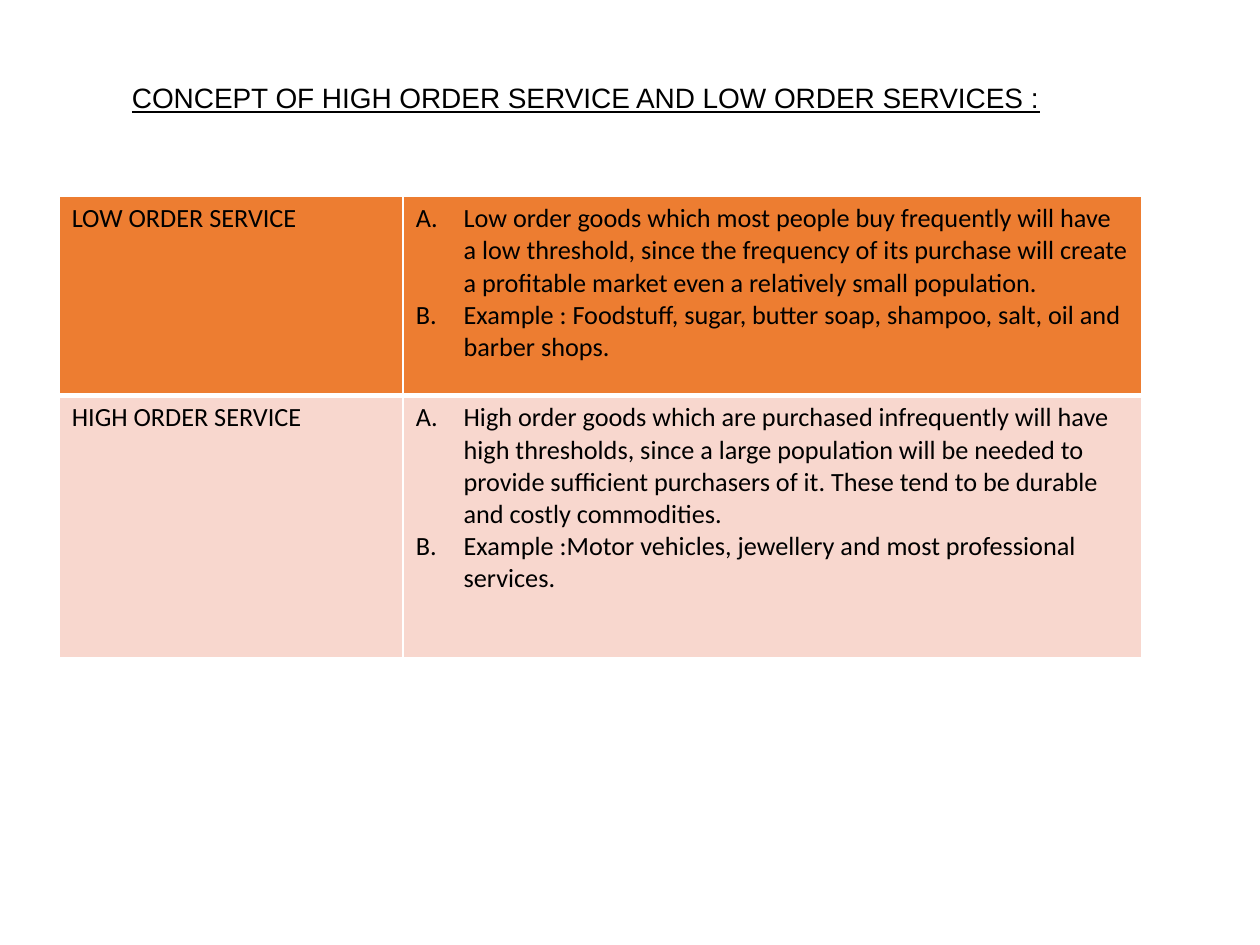
from lxml.etree import SubElement
from pptx import Presentation
from pptx.dml.color import RGBColor
from pptx.enum.text import PP_ALIGN
from pptx.oxml import parse_xml
from pptx.oxml.ns import nsdecls, qn
from pptx.util import Inches, Pt

BLACK = RGBColor(0x00, 0x00, 0x00)
WHITE = RGBColor(0xFF, 0xFF, 0xFF)
ORANGE = RGBColor(0xED, 0x7D, 0x31)
PINK = RGBColor(0xF8, 0xD7, 0xCE)

TITLE = "CONCEPT OF HIGH ORDER SERVICE AND LOW ORDER SERVICES :"
COLUMN_WIDTHS = (2.73, 5.86)
# Each row: height, fill, top and bottom border widths, heading, lettered points
SERVICES = [
    (1.58, ORANGE, 1, 3, "LOW ORDER SERVICE", [
        "Low order goods which most people buy frequently will have a low threshold, "
        "since the frequency of its purchase will create a profitable market even a "
        "relatively small population.",
        "Example : Foodstuff, sugar, butter soap, shampoo, salt, oil and barber shops.",
    ]),
    (2.08, PINK, 3, 1, "HIGH ORDER SERVICE", [
        "High order goods which are purchased infrequently will have high thresholds, "
        "since a large population will be needed to provide sufficient purchasers of it. "
        "These tend to be durable and costly commodities.",
        "Example :Motor vehicles, jewellery and most professional services.",
    ]),
]


class SlideBuilder:
    title_font, title_size = "Arial", 16
    table_font, table_size = "Calibri", 15
    indent = 0.38

    def __init__(self, slide):
        self.slide = slide

    def style(self, para, name, size):
        para.font.name = name
        para.font.size = Pt(size)
        para.font.color.rgb = BLACK

    def title(self, text, left, top, width, height):
        box = self.slide.shapes.add_textbox(
            Inches(left), Inches(top), Inches(width), Inches(height))
        frame = box.text_frame
        frame.word_wrap = True
        frame.margin_top = Inches(0.64)
        para = frame.paragraphs[0]
        para.text = text
        para.alignment = PP_ALIGN.CENTER
        self.style(para, self.title_font, self.title_size)
        para.font.underline = True

    def letter(self, para):
        """Number the paragraph A., B., ... with a hanging indent."""
        properties = para._p.get_or_add_pPr()
        properties.set("marL", str(Inches(self.indent)))
        properties.set("indent", str(-Inches(self.indent)))
        numbering = parse_xml(f'<a:buAutoNum {nsdecls("a")} type="alphaUcPeriod"/>')
        properties.insert_element_before(numbering, "a:tabLst", "a:defRPr", "a:extLst")

    def borders(self, cell, top, bottom):
        properties = cell._tc.get_or_add_tcPr()
        sides = (("L", 1), ("R", 1), ("T", top), ("B", bottom))
        for position, (side, width) in enumerate(sides):
            line = SubElement(properties, qn(f"a:ln{side}"), w=str(Pt(width)))
            fill = SubElement(line, qn("a:solidFill"))
            SubElement(fill, qn("a:srgbClr"), val=str(WHITE))
            properties.insert(position, line)

    def cell(self, cell, texts, fill, top, bottom, lettered):
        cell.fill.solid()
        cell.fill.fore_color.rgb = fill
        self.borders(cell, top, bottom)
        cell.text = "\n".join(texts)
        for para in cell.text_frame.paragraphs:
            self.style(para, self.table_font, self.table_size)
            if lettered:
                self.letter(para)

    def table(self, services, widths, left, top):
        height = sum(service[0] for service in services)
        table = self.slide.shapes.add_table(
            len(services), len(widths), Inches(left), Inches(top),
            Inches(sum(widths)), Inches(height)).table
        table.first_row = table.horz_banding = False
        for column, width in zip(table.columns, widths):
            column.width = Inches(width)
        for row, service in zip(table.rows, services):
            row_height, fill, above, below, heading, points = service
            row.height = Inches(row_height)
            self.cell(row.cells[0], [heading], fill, above, below, lettered=False)
            self.cell(row.cells[1], points, fill, above, below, lettered=True)


def main():
    deck = Presentation()
    deck.slide_width, deck.slide_height = Inches(10), Inches(7.5)
    page = SlideBuilder(deck.slides.add_slide(deck.slide_layouts[6]))
    page.title(TITLE, 0, 0, 9.3, 2.42)
    page.table(SERVICES, COLUMN_WIDTHS, 0.47, 1.56)
    deck.save("out.pptx")


if __name__ == "__main__":
    main()
